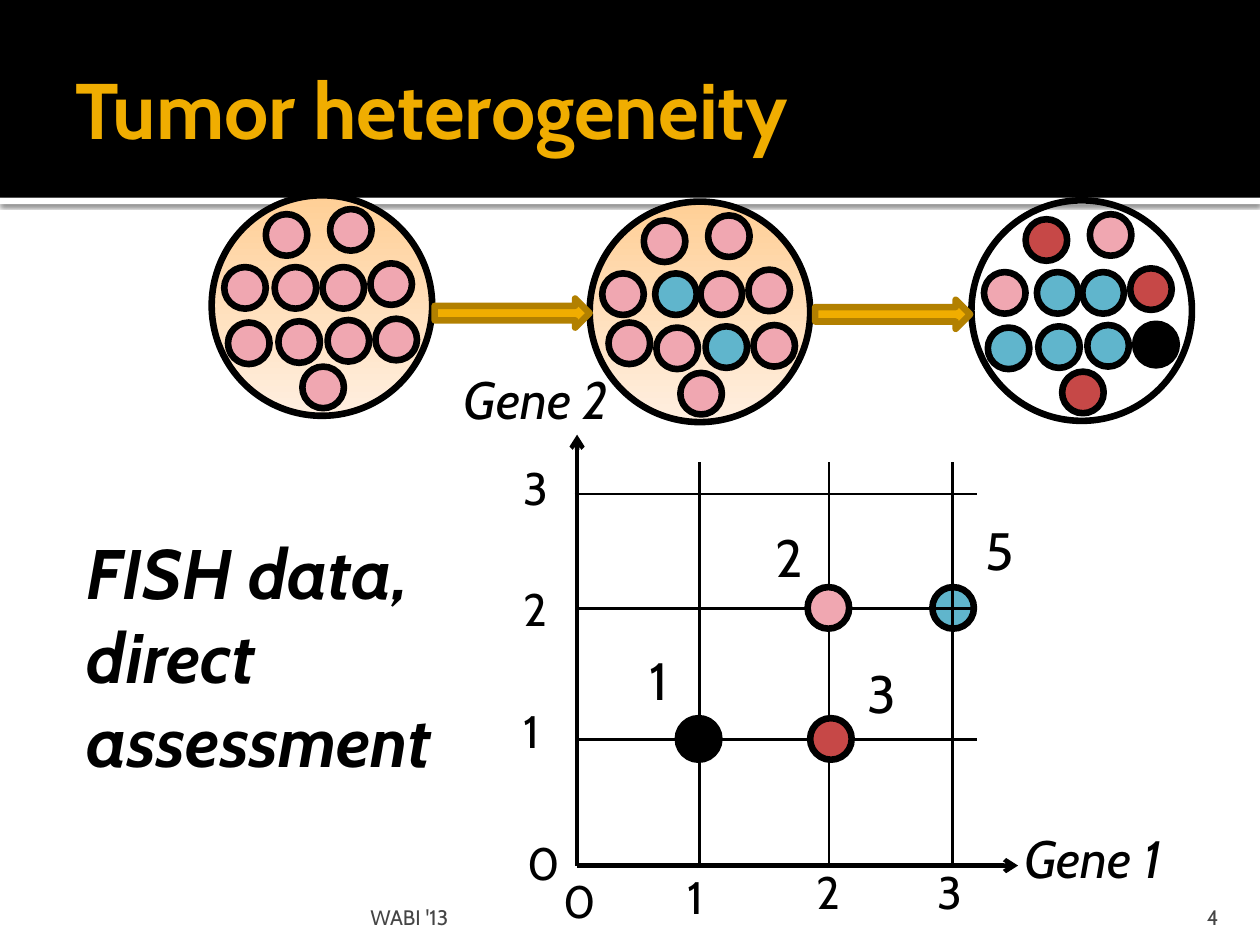
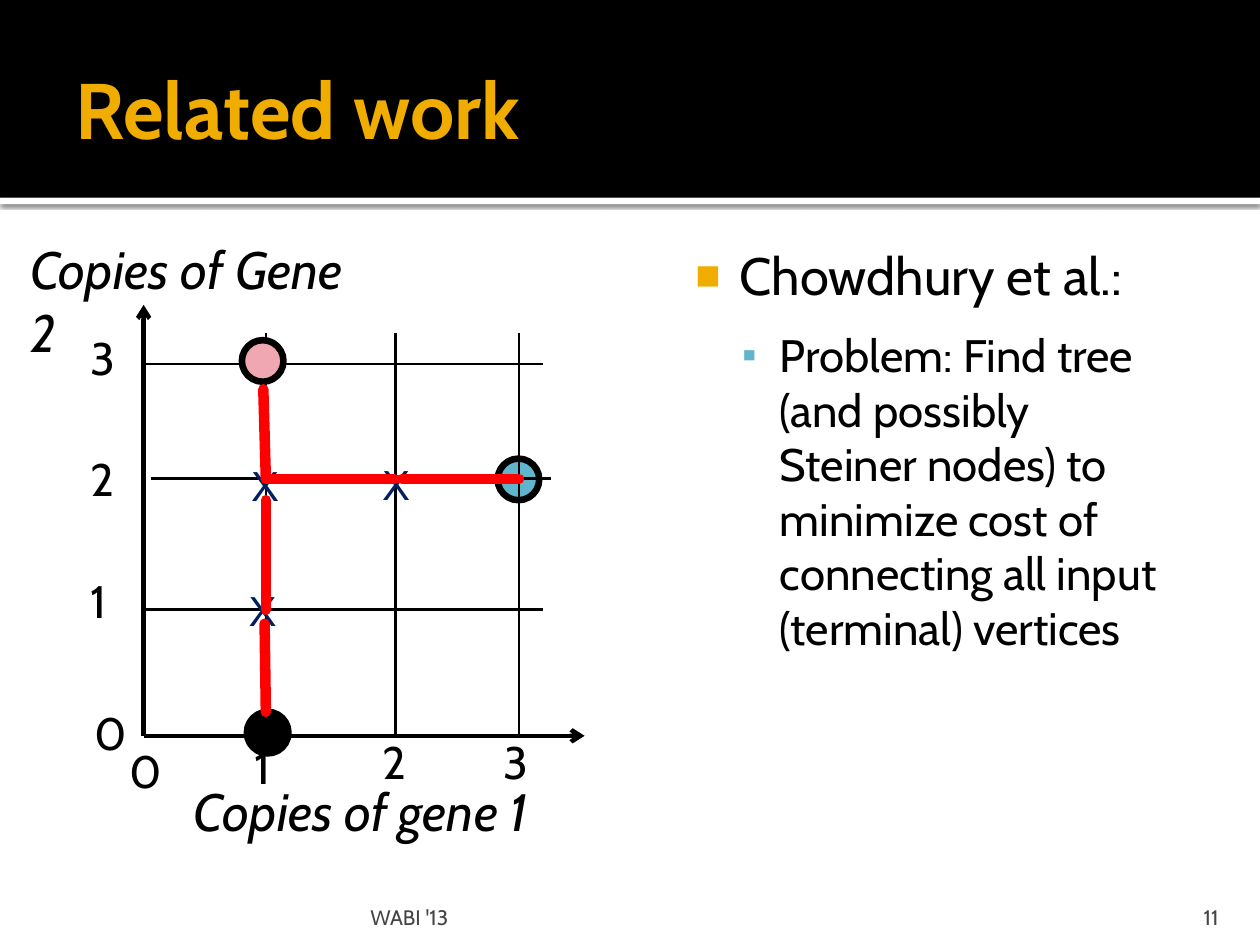
from dataclasses import dataclass

from lxml import etree
from pptx import Presentation
from pptx.dml.color import RGBColor
from pptx.enum.shapes import MSO_CONNECTOR, MSO_SHAPE
from pptx.enum.text import MSO_ANCHOR, PP_ALIGN
from pptx.oxml.ns import qn
from pptx.util import Inches, Pt

OVAL, RECT, ARROW = MSO_SHAPE.OVAL, MSO_SHAPE.RECTANGLE, MSO_SHAPE.RIGHT_ARROW
STRAIGHT = MSO_CONNECTOR.STRAIGHT
TOP, MIDDLE, BOTTOM = MSO_ANCHOR.TOP, MSO_ANCHOR.MIDDLE, MSO_ANCHOR.BOTTOM
LEFT, CENTER, RIGHT = PP_ALIGN.LEFT, PP_ALIGN.CENTER, PP_ALIGN.RIGHT


@dataclass(frozen=True)
class Theme:
    font: str = "Cabin"
    mark_font: str = "Arial"
    black: str = "000000"
    white: str = "FFFFFF"
    gold: str = "F0AD00"
    dark_gold: str = "B28000"
    pink: str = "F0A7B1"
    blue: str = "60B5CC"
    red: str = "C64847"
    tree: str = "FF0000"
    navy: str = "002060"
    gray: str = "454545"
    tissue: tuple = ("FFCF96", "FFEFE0")
    title: int = 45
    statement: int = 40
    label: int = 30
    tick: int = 26
    mark: int = 24
    footer: int = 12
    outline: float = 3.78
    axis: float = 2.5
    grid: float = 1.5
    branch: float = 6


THEME = Theme()
CELL_SIZE, DISH_SIZE = 0.33, 1.75
CELL_COLORS = {"p": THEME.pink, "b": THEME.blue, "r": THEME.red, "k": THEME.black}

# Cell places inside a dish, row by row
CELL_PLACES = [
    (0.43, 0.15), (0.94, 0.11),
    (0.10, 0.57), (0.52, 0.57), (0.88, 0.57), (1.26, 0.54),
    (0.13, 1.01), (0.53, 1.00), (0.92, 0.99), (1.30, 0.98),
    (0.72, 1.36),
]
# Left, top, cell colors in the order above, tinted, cells that sit elsewhere
DISHES = [
    (1.68, 1.55, "ppppppppppp", True, {3: (0.50, 0.57)}),
    (4.68, 1.60, "pppbppppbpp", True, {6: (0.15, 0.96)}),
    (7.71, 1.59, "rppbbrbbbkr", False, {}),
]
DISH_ARROWS = [(3.45, 2.37), (6.47, 2.38)]
STATEMENT = ["FISH data,", "direct", "assessment"]

# Plot geometry, measured from the origin
AXIS_WIDTH, AXIS_HEIGHT = 3.5, 3.42
COLUMNS, COLUMN_HEIGHT = [0.97, 2.00, 2.98], 3.2
ROWS, ROW_WIDTH = [1.00, 2.04, 2.95], 3.17
COLUMN_TICKS = [(-0.21, 0.01), (0.78, -0.02), (1.80, -0.06), (2.76, -0.06)]
ROW_TICKS = [(-0.49, -0.29), (-0.52, -1.34), (-0.52, -2.31), (-0.52, -3.27)]

CELL_PLOT = {
    "origin": (4.58, 6.87),
    "row_shifts": [0, 0, -0.02],
    "behind": [(7.40, 4.66, "b")],
    "front": [(6.41, 4.66, "p"), (6.43, 5.70, "r"), (5.38, 5.70, "k")],
    "names": [("Gene 1", 8.03, 6.51, 1.41, False), ("Gene 2", 3.58, 2.86, 1.41, False)],
}
COUNTS = [("3", 6.79, 5.20), ("2", 6.06, 4.12), ("5", 7.72, 4.06), ("1", 5.06, 5.09)]

TREE_PLOT = {
    "origin": (1.14, 5.84),
    "row_shifts": [0, 0.06, -0.02],
    "behind": [(3.95, 3.64, "b")],
    "front": [(1.92, 2.70, "p"), (1.96, 5.65, "k")],
    "names": [("Copies of gene 1", 1.44, 6.13, 2.89, False),
              ("Copies of Gene 2", 0.14, 1.83, 2.97, True)],
}
BRANCHES = [
    ((2.09, 3.09), (2.11, 3.80)), ((2.11, 3.97), (2.11, 4.84)),
    ((2.10, 4.95), (2.11, 5.65)), ((3.13, 3.80), (2.11, 3.80)),
    ((4.12, 3.80), (3.19, 3.80)),
]
STEINER_MARKS = [(1.89, 3.60), (1.87, 4.59), (2.93, 3.59)]
# Text, size, left margin, hanging indent, space before, bullet, color, bullet percent
POINTS = [
    ("Chowdhury et al.:", 30, 0.48, 0.35, 0, "■", THEME.gold, 80),
    ("Problem: Find tree (and possibly Steiner nodes) to minimize cost of "
     "connecting all input (terminal) vertices", 26, 0.80, 0.30, 12, "▪", THEME.blue, 90),
]


def rgb(value):
    return RGBColor.from_string(value)


def add_child(parent, tag, **attributes):
    return etree.SubElement(parent, qn(tag), attributes)


def add_box(page, left, top, width, height, insets=(0.1, 0.05, 0.1, 0.05),
            anchor=TOP, wrap=True):
    box = page.shapes.add_textbox(*map(Inches, (left, top, width, height)))
    frame = box.text_frame
    frame.word_wrap = wrap
    frame.vertical_anchor = anchor
    (frame.margin_left, frame.margin_top,
     frame.margin_right, frame.margin_bottom) = map(Inches, insets)
    return frame


def add_span(para, text, size, color=THEME.black, font=THEME.font, bold=False, italic=False):
    span = para.add_run()
    span.text = text
    span.font.name, span.font.size = font, Pt(size)
    span.font.bold, span.font.italic = bold, italic
    span.font.color.rgb = rgb(color)


def add_line_of_text(page, text, size, box, align=LEFT, box_style=None, **style):
    para = add_box(page, *box, **(box_style or {})).paragraphs[0]
    para.alignment = align
    add_span(para, text, size, **style)


def add_label(page, text, size, left, top, width, height, wrap=False, **style):
    add_line_of_text(page, text, size, (left, top, width, height),
                     box_style={"wrap": wrap}, **style)


def add_figure(page, kind, left, top, width, height, fill=None, outline=None):
    """Fill is one color, a pair of colors for a gradient, or None."""
    figure = page.shapes.add_shape(kind, *map(Inches, (left, top, width, height)))
    figure.shadow.inherit = False
    if fill is None:
        figure.fill.background()
    elif isinstance(fill, tuple):
        figure.fill.gradient()
        figure.fill.gradient_angle = 270
        for stop, color in zip(figure.fill.gradient_stops, fill):
            stop.color.rgb = rgb(color)
    else:
        figure.fill.solid()
        figure.fill.fore_color.rgb = rgb(fill)
    if outline:
        figure.line.color.rgb = rgb(outline)
        figure.line.width = Pt(THEME.outline)
    else:
        figure.line.fill.background()
    return figure


def add_cell(page, left, top, code):
    add_figure(page, OVAL, left, top, CELL_SIZE, CELL_SIZE, CELL_COLORS[code], THEME.black)


def add_line(page, start, end, width, color=THEME.black, arrow=False, rounded=False):
    line = page.shapes.add_connector(STRAIGHT, *map(Inches, (*start, *end)))
    line.line.color.rgb = rgb(color)
    line.line.width = Pt(width)
    properties = line._element.spPr
    stroke = properties.find(qn("a:ln"))
    if rounded:
        stroke.set("cap", "rnd")
    if arrow:
        add_child(stroke, "a:tailEnd", type="arrow")
    add_child(properties, "a:effectLst")


def add_page(deck, title, number):
    """Start a slide with the shared band, title and footer."""
    page = deck.slides.add_slide(deck.slide_layouts[6])
    strip = add_figure(page, RECT, 0, 1.57, 10, 0.05, THEME.white)
    effects = strip._element.spPr.find(qn("a:effectLst"))
    shadow = add_child(effects, "a:outerShdw", blurRad=str(Pt(2.5)), dist=str(Pt(0.8)),
                       dir="5400000", algn="tl", rotWithShape="0")
    shade = add_child(shadow, "a:srgbClr", val=THEME.black)
    add_child(shade, "a:alpha", val="60000")
    add_figure(page, RECT, 0, 0, 10, 1.57, THEME.black)
    add_line_of_text(page, title, THEME.title, (0.5, 0.17, 9, 1.37), color=THEME.gold, bold=True,
                     box_style={"insets": (0.1, 0.05, 0.05, 0.05), "anchor": MIDDLE})
    for text, left, width, side, align in [("WABI '13", 2.89, 6.02, 0.05, LEFT),
                                           (str(number), 8.97, 0.8, 0.1, RIGHT)]:
        add_line_of_text(page, text, THEME.footer, (left, 7.08, width, 0.3), align,
                         {"insets": (side, 0.05, side, 0), "anchor": BOTTOM}, color=THEME.gray)
    return page


def add_plot(page, plot):
    x, y = plot["origin"]
    for cell in plot["behind"]:
        add_cell(page, *cell)
    for end in [(x + AXIS_WIDTH, y), (x, y - AXIS_HEIGHT)]:
        add_line(page, (x, y), end, THEME.axis, arrow=True)
    for column in COLUMNS:
        add_line(page, (x + column, y), (x + column, y - COLUMN_HEIGHT), THEME.grid)
    for row, shift in zip(ROWS, plot["row_shifts"]):
        end = x + ROW_WIDTH + max(shift, 0)
        add_line(page, (x + shift, y - row), (end, y - row), THEME.grid)
    for cell in plot["front"]:
        add_cell(page, *cell)
    for name, left, top, width, wrap in plot["names"]:
        add_label(page, name, THEME.label, left, top, width, 0.61, wrap, italic=True)
    for ticks in (COLUMN_TICKS, ROW_TICKS):
        for value, (right, down) in enumerate(ticks):
            add_label(page, str(value), THEME.tick, x + right, y + down, 0.39, 0.54)


def add_dish(page, left, top, codes, tinted, moved):
    add_figure(page, OVAL, left, top, DISH_SIZE, DISH_SIZE,
               THEME.tissue if tinted else None, THEME.black)
    for index, (code, place) in enumerate(zip(codes, CELL_PLACES)):
        right, down = moved.get(index, place)
        add_cell(page, left + right, top + down, code)


def add_points(page):
    frame = add_box(page, 5.33, 1.83, 4.08, 5.11, (0.06, 0.1, 0.1, 0.05))
    for index, (text, size, margin, hang, before, mark, color, percent) in enumerate(POINTS):
        para = frame.add_paragraph() if index else frame.paragraphs[0]
        para.level = index
        para.space_before = Pt(before)
        properties = para._p.get_or_add_pPr()
        properties.set("marL", str(Inches(margin)))
        properties.set("indent", str(-Inches(hang)))
        add_child(add_child(properties, "a:buClr"), "a:srgbClr", val=color)
        add_child(properties, "a:buSzPct", val=str(percent * 1000))
        add_child(properties, "a:buFont", typeface=THEME.mark_font)
        add_child(properties, "a:buChar", char=mark)
        add_span(para, text, size)


def build_heterogeneity(deck):
    page = add_page(deck, "Tumor heterogeneity", 4)
    frame = add_box(page, 0.5, 4.1, 3.5, 2.2, (0.19, 0.1, 0.1, 0.05))
    for index, text in enumerate(STATEMENT):
        para = frame.add_paragraph() if index else frame.paragraphs[0]
        add_span(para, text, THEME.statement, bold=True, italic=True)
    add_plot(page, CELL_PLOT)
    for dish in DISHES:
        add_dish(page, *dish)
    for left, top in DISH_ARROWS:
        add_figure(page, ARROW, left, top, 1.23, 0.23, THEME.gold, THEME.dark_gold)
    for count, left, top in COUNTS:
        add_label(page, count, THEME.label, left, top, 0.4, 0.61)


def build_related_work(deck):
    page = add_page(deck, "Related work", 11)
    add_plot(page, TREE_PLOT)
    for left, top in STEINER_MARKS:
        add_line_of_text(page, "X", THEME.mark, (left, top, 0.43, 0.5), CENTER,
                         {"wrap": False}, color=THEME.navy, font=THEME.mark_font)
    for start, end in BRANCHES:
        add_line(page, start, end, THEME.branch, THEME.tree, rounded=True)
    add_points(page)


def main():
    deck = Presentation()
    deck.slide_width, deck.slide_height = Inches(10), Inches(7.5)
    build_heterogeneity(deck)
    build_related_work(deck)
    deck.save("out.pptx")


if __name__ == "__main__":
    main()
